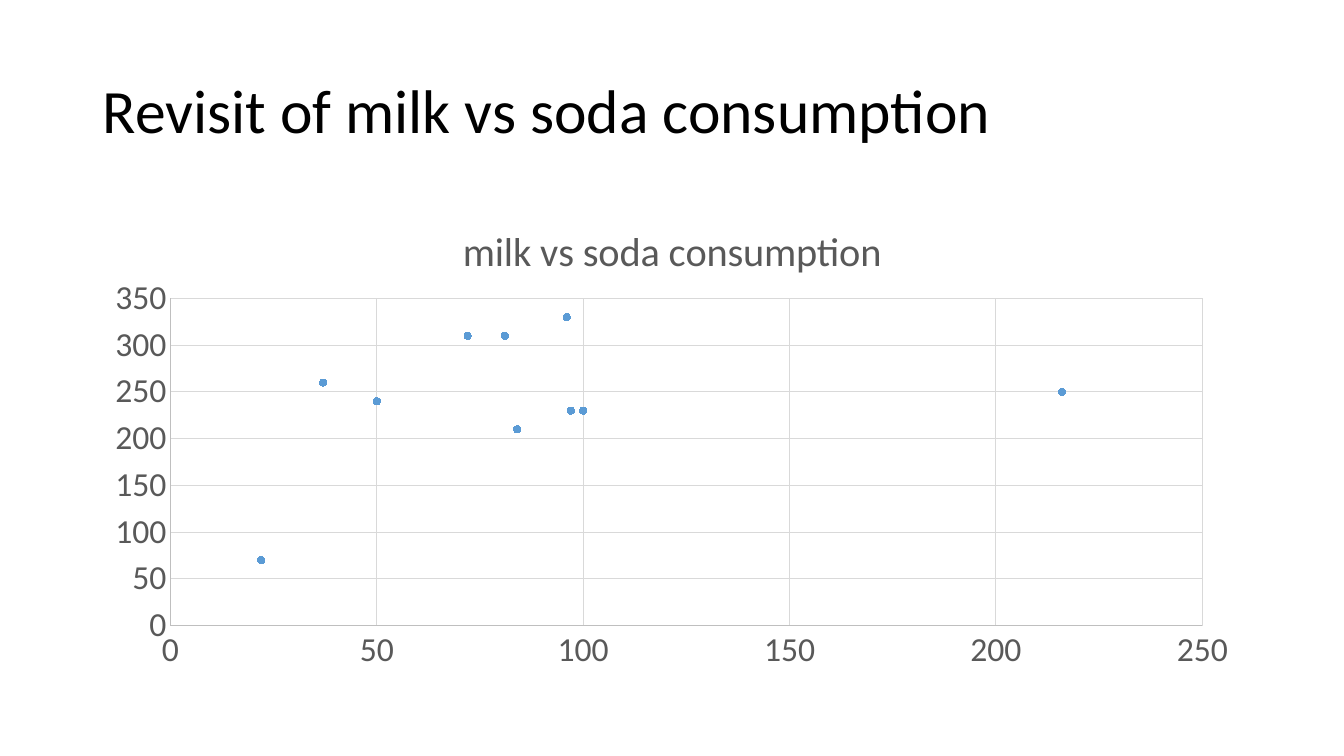
from pptx import Presentation
from pptx.chart.data import XyChartData
from pptx.dml.color import RGBColor
from pptx.enum.chart import XL_CHART_TYPE, XL_MARKER_STYLE, XL_TICK_MARK
from pptx.enum.text import MSO_ANCHOR, MSO_AUTO_SIZE, PP_ALIGN
from pptx.oxml import parse_xml
from pptx.oxml.ns import nsdecls, qn
from pptx.util import Inches, Pt

COLORS = {"title": "000000", "label": "595959", "axis": "BFBFBF", "grid": "D9D9D9", "point": "5B9BD5"}
CONSUMPTION = [
    (216, 250), (100, 230), (81, 310), (37, 260), (97, 230),
    (96, 330), (84, 210), (72, 310), (50, 240), (22, 70),
]


class SlideBuilder:
    font_name = "Calibri"

    def __init__(self, deck):
        self.page = deck.slides.add_slide(deck.slide_layouts[5])

    def color(self, name):
        return RGBColor.from_string(COLORS[name])

    def style_font(self, font, size, color):
        font.name = self.font_name
        font.size = Pt(size)
        font.bold = False
        font.color.rgb = self.color(color)

    def style_line(self, line, color):
        line.color.rgb = self.color(color)
        line.width = Pt(0.75)

    def add_title(self, text, left, top, width, height):
        box = self.page.shapes.title
        box.left, box.top, box.width, box.height = map(Inches, (left, top, width, height))
        frame = box.text_frame
        frame.text = text
        frame.word_wrap = True
        frame.auto_size = MSO_AUTO_SIZE.NONE
        frame.vertical_anchor = MSO_ANCHOR.MIDDLE
        para = frame.paragraphs[0]
        para.alignment = PP_ALIGN.LEFT
        para.line_spacing = 0.9
        self.style_font(para.font, 44, "title")

    def place_part(self, layout, target="", **fractions):
        for child in list(layout):
            layout.remove(child)
        inner = f'<c:layoutTarget val="{target}"/>' if target else ""
        modes = '<c:xMode val="edge"/><c:yMode val="edge"/>'
        sizes = "".join(f'<c:{name} val="{value}"/>' for name, value in fractions.items())
        layout.append(parse_xml(f'<c:manualLayout {nsdecls("c")}>{inner}{modes}{sizes}</c:manualLayout>'))

    def style_axis(self, axis, maximum):
        axis.minimum_scale = 0
        axis.maximum_scale = maximum
        axis.major_unit = 50
        axis.major_tick_mark = XL_TICK_MARK.NONE
        axis.minor_tick_mark = XL_TICK_MARK.NONE
        axis.has_major_gridlines = True
        self.style_line(axis.major_gridlines.format.line, "grid")
        self.style_line(axis.format.line, "axis")
        self.style_font(axis.tick_labels.font, 24, "label")

    def add_scatter(self, title, points, left, top, width, height):
        data = XyChartData()
        series_data = data.add_series("Series 1")
        for soda, milk in points:
            series_data.add_data_point(soda, milk)
        frame = self.page.shapes.add_chart(
            XL_CHART_TYPE.XY_SCATTER, *map(Inches, (left, top, width, height)), data)
        chart = frame.chart
        self.style_font(chart.font, 24, "title")
        chart.has_legend = False
        chart.has_title = True
        chart.chart_title.text_frame.text = title
        self.style_font(chart.chart_title.text_frame.paragraphs[0].font, 28.8, "label")
        self.style_axis(chart.category_axis, 250)
        self.style_axis(chart.value_axis, 350)
        for body in chart.element.iterfind(f'.//{qn("c:valAx")}/{qn("c:txPr")}/{qn("a:bodyPr")}'):
            body.set("rot", "-60000000")
            body.set("vert", "horz")
        plot = chart.plots[0]
        plot.vary_by_categories = False
        series = plot.series[0]
        series.smooth = False
        series.format.line.fill.background()
        series.marker.style = XL_MARKER_STYLE.CIRCLE
        series.marker.size = 5
        series.marker.format.fill.solid()
        series.marker.format.fill.fore_color.rgb = self.color("point")
        self.style_line(series.marker.format.line, "point")
        area = chart.element.find(f'.//{qn("c:plotArea")}')
        area_layout = area.find(qn("c:layout"))
        if area_layout is None:
            area_layout = parse_xml(f'<c:layout {nsdecls("c")}/>')
            area.insert(0, area_layout)
        self.place_part(area_layout, "inner", x=0.067, y=0.202, w=0.89, h=0.682)
        title_layout = chart.element.find(f'.//{qn("c:title")}/{qn("c:layout")}')
        if title_layout is not None:
            self.place_part(title_layout, x=0.313, y=0.032)


def main():
    deck = Presentation()
    deck.slide_width = Inches(13.33)
    deck.slide_height = Inches(7.5)
    builder = SlideBuilder(deck)
    builder.add_title("Revisit of milk vs soda consumption", 0.92, 0.4, 11.5, 1.45)
    builder.add_scatter("milk vs soda consumption", CONSUMPTION, 0.92, 2, 11.5, 4.76)
    deck.save("out.pptx")


if __name__ == "__main__":
    main()
